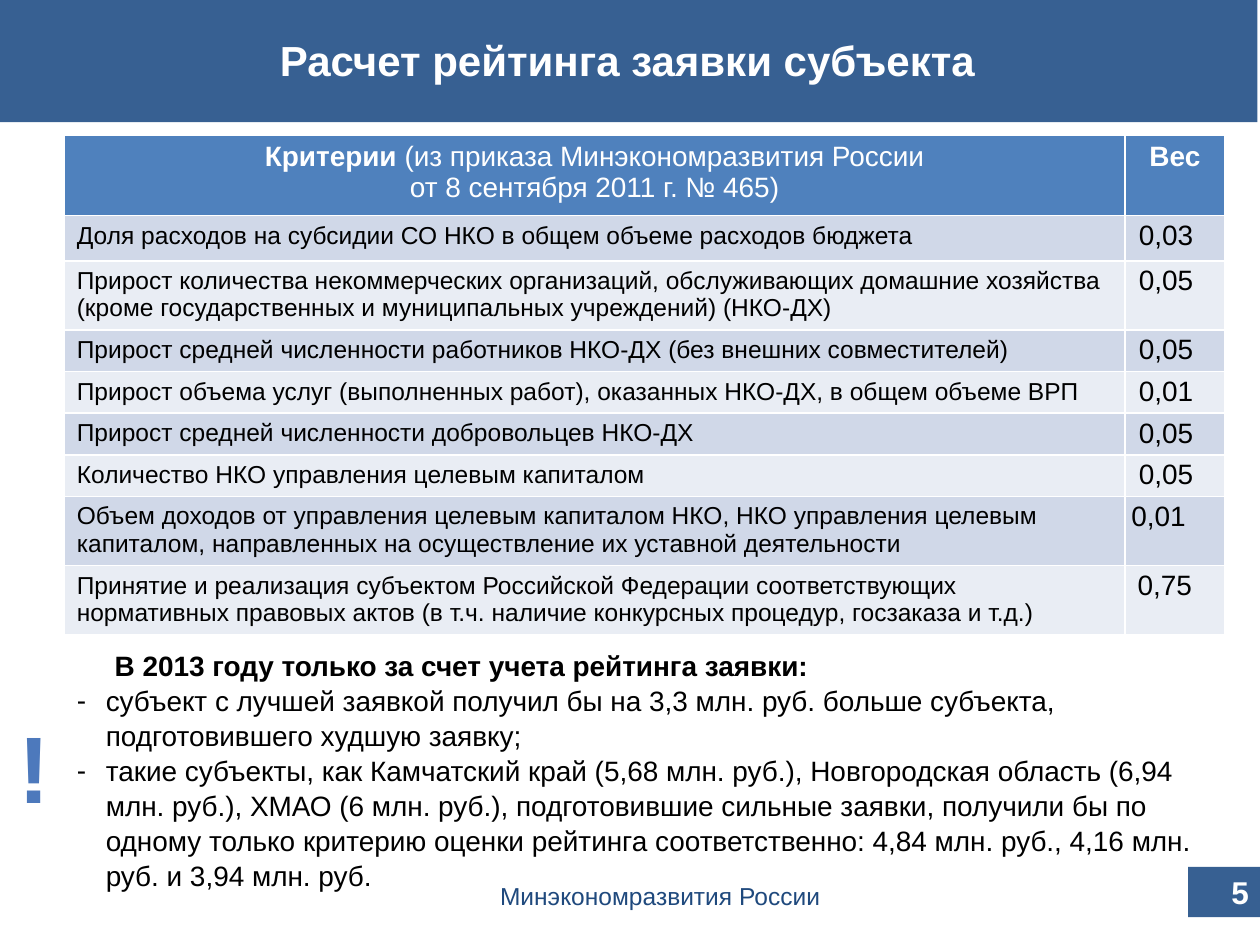
from pptx import Presentation
from pptx.dml.color import RGBColor
from pptx.enum.shapes import MSO_SHAPE as Shape
from pptx.enum.text import MSO_ANCHOR as Anchor, MSO_AUTO_SIZE as AutoSize, PP_ALIGN as Align
from pptx.oxml import parse_xml
from pptx.oxml.ns import nsdecls
from pptx.util import Inches, Pt

NAVY, BLUE, WHITE, BLACK = "376092", "4F81BD", "FFFFFF", "000000"
ROW_FILLS = ("D0D8E8", "E9EDF4")
ROW_HEIGHTS = (0.64, 0.36, 0.55, 0.33, 0.33, 0.33, 0.33, 0.55, 0.55)
CRITERIA = (
    ("Доля расходов на субсидии СО НКО в общем объеме расходов бюджета", "0,03", 0.11),
    ("Прирост количества некоммерческих организаций, обслуживающих домашние хозяйства "
     "(кроме государственных и муниципальных учреждений) (НКО-ДХ)", "0,05", 0.11),
    ("Прирост средней численности работников НКО-ДХ (без внешних совместителей)", "0,05", 0.11),
    ("Прирост объема услуг (выполненных работ), оказанных НКО-ДХ, в общем объеме ВРП", "0,01", 0.11),
    ("Прирост средней численности добровольцев НКО-ДХ", "0,05", 0.11),
    ("Количество НКО управления целевым капиталом", "0,05", 0.11),
    ("Объем доходов от управления целевым капиталом НКО, НКО управления целевым капиталом, "
     "направленных на осуществление их уставной деятельности", "0,01", 0.05),
    ("Принятие и реализация субъектом Российской Федерации соответствующих нормативных "
     "правовых актов (в т.ч. наличие конкурсных процедур, госзаказа и т.д.)", "0,75", 0.1),
)
CONCLUSIONS = (
    "В 2013 году только за счет учета рейтинга заявки:",
    "субъект с лучшей заявкой получил бы на 3,3 млн. руб. больше субъекта, "
    "подготовившего худшую заявку;",
    "такие субъекты, как Камчатский край (5,68 млн. руб.), Новгородская область "
    "(6,94 млн. руб.), ХМАО (6 млн. руб.), подготовившие сильные заявки, получили бы по одному "
    "только критерию оценки рейтинга соответственно: 4,84 млн. руб., 4,16 млн. руб. и 3,94 млн. руб.",
)


def paint(target, color):
    target.fill.solid()
    target.fill.fore_color.rgb = RGBColor.from_string(color)


def style(frame, size, color, bold=False, align=Align.LEFT):
    for para in frame.paragraphs:
        para.alignment = align
        for span in para.runs:
            span.font.name = "Arial"
            span.font.size = Pt(size)
            span.font.bold = bold
            span.font.color.rgb = RGBColor.from_string(color)


def place(shape, left, top, width, height):
    shape.left, shape.top = Inches(left), Inches(top)
    shape.width, shape.height = Inches(width), Inches(height)


def add_title(page, text):
    title = page.shapes.title
    place(title, -0.02, -0.02, 10, 0.99)
    paint(title, NAVY)
    frame = title.text_frame
    frame.text = text
    frame.vertical_anchor = Anchor.MIDDLE
    style(frame, 24, WHITE, True, Align.CENTER)


def fill_cell(cell, text, size, color, fill, bold=False, align=Align.LEFT):
    cell.text_frame.text = text
    paint(cell, fill)
    style(cell.text_frame, size, color, bold, align)


def add_criteria_table(page):
    frame = page.shapes.add_table(len(ROW_HEIGHTS), 2, Inches(0.51), Inches(1.07),
                                  Inches(9.21), Inches(sum(ROW_HEIGHTS)))
    table = frame.table
    for column, width in zip(table.columns, (8.42, 0.79)):
        column.width = Inches(width)
    for row, height in zip(table.rows, ROW_HEIGHTS):
        row.height = Inches(height)

    heading = table.cell(0, 0)
    fill_cell(heading, "Критерии \nот 8 сентября 2011 г. № 465)", 16, WHITE, BLUE, align=Align.CENTER)
    first = heading.text_frame.paragraphs[0]
    first.add_run().text = "(из приказа Минэкономразвития России"
    style(heading.text_frame, 16, WHITE, align=Align.CENTER)
    first.runs[0].font.bold = True
    fill_cell(table.cell(0, 1), "Вес", 16, WHITE, BLUE, True, Align.CENTER)

    for index, (criterion, weight, indent) in enumerate(CRITERIA):
        fill = ROW_FILLS[index % 2]
        fill_cell(table.cell(index + 1, 0), criterion, 14, BLACK, fill)
        cell = table.cell(index + 1, 1)
        fill_cell(cell, weight, 16, BLACK, fill)
        cell.margin_left, cell.margin_right = Inches(indent), Inches(0.05)
        cell.margin_top = cell.margin_bottom = 0
        cell.text_frame.paragraphs[0].line_spacing = 1.15


def set_bullet(para, bullet, margin, indent):
    properties = para._p.get_or_add_pPr()
    properties.set("marL", str(Inches(margin)))
    properties.set("indent", str(Inches(indent)))
    if bullet:
        properties.append(parse_xml(f'<a:buFont {nsdecls("a")} typeface="Arial"/>'))
        properties.append(parse_xml(f'<a:buChar {nsdecls("a")} char="{bullet}"/>'))
    else:
        properties.append(parse_xml(f'<a:buNone {nsdecls("a")}/>'))


def add_conclusions(page):
    body = page.placeholders[1]
    place(body, 0.51, 5.09, 9.06, 1.97)
    frame = body.text_frame
    frame.text = "\n".join(CONCLUSIONS)
    frame.auto_size = AutoSize.NONE
    lead, *items = frame.paragraphs
    set_bullet(lead, None, 0, 0.3)
    for item in items:
        set_bullet(item, "-", 0.23, -0.23)
    style(frame, 16, BLACK)
    lead.runs[0].font.bold = True
    for para in frame.paragraphs:
        para.space_before = Pt(0)
        para.line_spacing = 1.04


def add_label(page, text, area, size, color, bold=False, wrap=True):
    box = page.shapes.add_textbox(*map(Inches, area))
    box.text_frame.text = text
    box.text_frame.word_wrap = wrap
    style(box.text_frame, size, color, bold, Align.CENTER)


def add_page_number(page, text):
    box = page.shapes.add_shape(Shape.RECTANGLE, *map(Inches, (9.43, 6.88, 0.58, 0.4)))
    box.shadow.inherit = False
    paint(box, NAVY)
    box.line.fill.background()
    box.text_frame.text = text
    box.text_frame.vertical_anchor = Anchor.MIDDLE
    style(box.text_frame, 18, WHITE, True, Align.RIGHT)


def main():
    deck = Presentation()
    deck.slide_width, deck.slide_height = Inches(10), Inches(7.5)
    page = deck.slides.add_slide(deck.slide_layouts[1])
    add_title(page, "Расчет рейтинга заявки субъекта")
    add_criteria_table(page)
    add_conclusions(page)
    add_label(page, "Минэкономразвития России", (3.03, 6.94, 4.42, 0.28), 14, "1F497D")
    add_label(page, "!", (0.05, 5.58, 0.45, 1.01), 54, "4D79BC", True, False)
    add_page_number(page, "5")
    deck.save("out.pptx")


if __name__ == "__main__":
    main()
